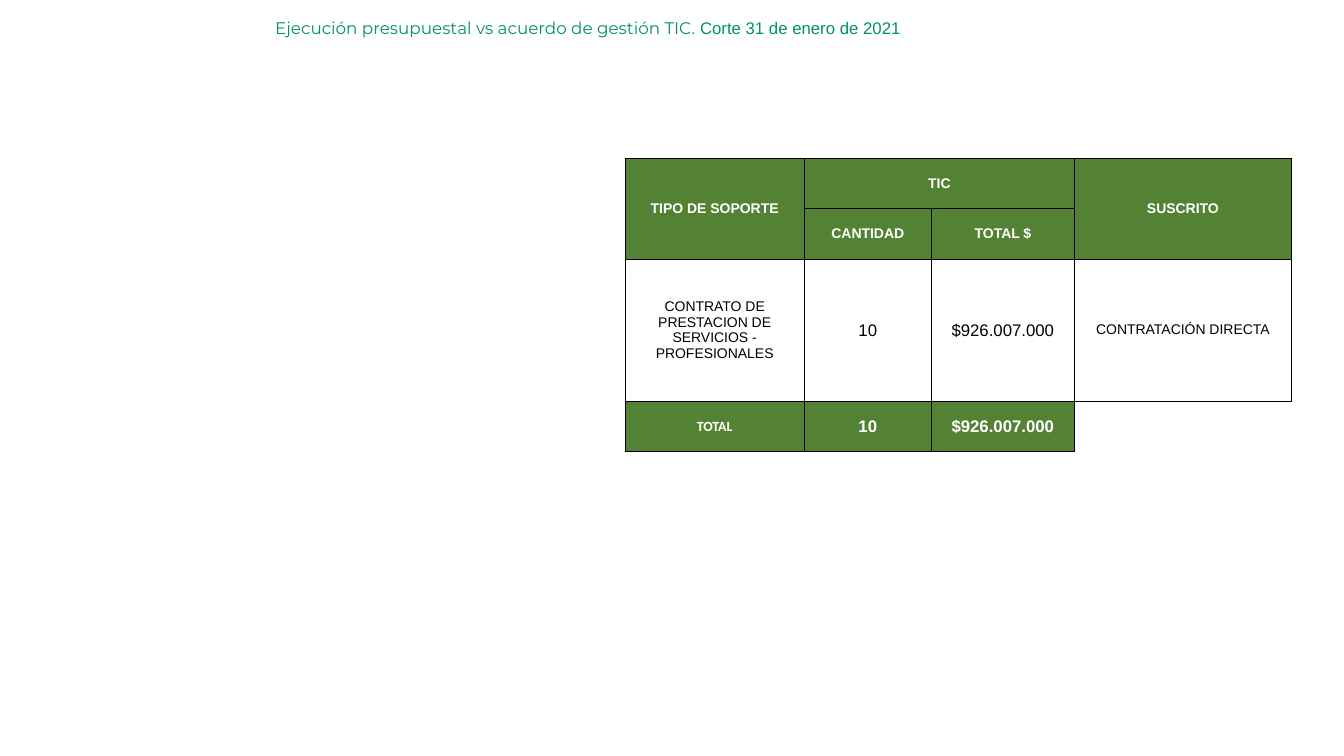
from dataclasses import dataclass

from lxml import etree
from pptx import Presentation
from pptx.dml.color import RGBColor
from pptx.enum.text import MSO_ANCHOR, MSO_AUTO_SIZE, PP_ALIGN
from pptx.oxml.ns import qn
from pptx.util import Cm, Pt

MIDDLE = MSO_ANCHOR.MIDDLE
NO_AUTOFIT = MSO_AUTO_SIZE.NONE
LEFT, CENTER = PP_ALIGN.LEFT, PP_ALIGN.CENTER
TITLE_ONLY = 5


@dataclass(frozen=True)
class Theme:
    """Colours, fonts and type sizes of the slide."""

    title: RGBColor = RGBColor.from_string("009267")
    green: RGBColor = RGBColor.from_string("548235")
    white: RGBColor = RGBColor.from_string("FFFFFF")
    black: RGBColor = RGBColor.from_string("000000")
    display: str = "Montserrat"
    body: str = "Arial"
    total_label: str = "Calibri"
    label_size: Pt = Pt(10)
    figure_size: Pt = Pt(12)
    border: Pt = Pt(0.5)


THEME = Theme()
TITLE_BOX = (Cm(6.68), Cm(0.33), Cm(27.18), Cm(0.76))
TABLE_BOX = (Cm(15.75), Cm(3.99), Cm(16.79), Cm(7.39))
COLUMN_WIDTHS = (4.52, 3.2, 3.61, 5.46)
ROW_HEIGHTS = (1.27, 1.27, 3.58, 1.27)
ROWS = (
    ("TIPO DE SOPORTE", "TIC", "", "SUSCRITO"),
    ("", "CANTIDAD", "TOTAL $", ""),
    ("CONTRATO DE PRESTACION DE SERVICIOS - PROFESIONALES", "10", "$926.007.000",
     "CONTRATACIÓN DIRECTA"),
    ("TOTAL", "10", "$926.007.000", ""),
)
MERGES = (((0, 0), (1, 0)), ((0, 1), (0, 2)), ((0, 3), (1, 3)))
CONTRACT_ROW, TOTAL_ROW = 2, 3
FIGURE_COLUMNS = (1, 2)
OPEN_CELL = (3, 3)


def add_title(page, box):
    """Place the two-font heading in the title placeholder."""
    title = page.shapes.title
    title.left, title.top, title.width, title.height = box
    frame = title.text_frame
    frame.auto_size = NO_AUTOFIT
    frame.vertical_anchor = MIDDLE
    frame.word_wrap = True
    para = frame.paragraphs[0]
    para.alignment = LEFT
    para.font.size = THEME.figure_size
    para.font.color.rgb = THEME.title
    for text, font in (
        ("Ejecución presupuestal vs acuerdo de gestión TIC. ", THEME.display),
        ("Corte 31 de enero de 2021", THEME.body),
    ):
        span = para.add_run()
        span.text = text
        span.font.name = font


def set_borders(cell, drawn):
    """Draw the named sides of a cell and clear the others."""
    properties = cell._tc.get_or_add_tcPr()
    for side in "LRTB":
        line = etree.SubElement(properties, qn(f"a:ln{side}"), w=str(THEME.border))
        if side in drawn:
            fill = etree.SubElement(line, qn("a:solidFill"))
            etree.SubElement(fill, qn("a:srgbClr"), val=str(THEME.black))
        else:
            etree.SubElement(line, qn("a:noFill"))


def format_cell(cell, row, column, text):
    """Fill in one cell and style it by its place in the table."""
    is_open = (row, column) == OPEN_CELL
    is_contract = row == CONTRACT_ROW
    is_figure = row >= CONTRACT_ROW and column in FIGURE_COLUMNS
    set_borders(cell, "LT" if is_open else "LRTB")
    if is_open:
        cell.fill.background()
    else:
        cell.fill.solid()
        cell.fill.fore_color.rgb = THEME.white if is_contract else THEME.green
    cell.margin_left = cell.margin_right = cell.margin_top = cell.margin_bottom = 0
    cell.vertical_anchor = MIDDLE
    cell.text = text
    para = cell.text_frame.paragraphs[0]
    para.alignment = CENTER
    font = para.font
    font.name = THEME.total_label if (row, column) == (TOTAL_ROW, 0) else THEME.body
    font.size = THEME.figure_size if is_figure else THEME.label_size
    font.bold = not is_contract
    font.color.rgb = THEME.black if is_contract else THEME.white


def add_contract_table(page, box):
    """Place the table of contracts by type of support."""
    table = page.shapes.add_table(len(ROWS), len(COLUMN_WIDTHS), *box).table
    table.first_row = table.horz_banding = False
    for column, width in zip(table.columns, COLUMN_WIDTHS):
        column.width = Cm(width)
    for row, height in zip(table.rows, ROW_HEIGHTS):
        row.height = Cm(height)
    for row, texts in enumerate(ROWS):
        for column, text in enumerate(texts):
            format_cell(table.cell(row, column), row, column, text)
    for first, last in MERGES:
        table.cell(*first).merge(table.cell(*last))


def main():
    """Build the slide and save the deck."""
    deck = Presentation()
    deck.slide_width, deck.slide_height = Cm(33.87), Cm(19.05)
    page = deck.slides.add_slide(deck.slide_layouts[TITLE_ONLY])
    add_title(page, TITLE_BOX)
    add_contract_table(page, TABLE_BOX)
    deck.save("out.pptx")


if __name__ == "__main__":
    main()
